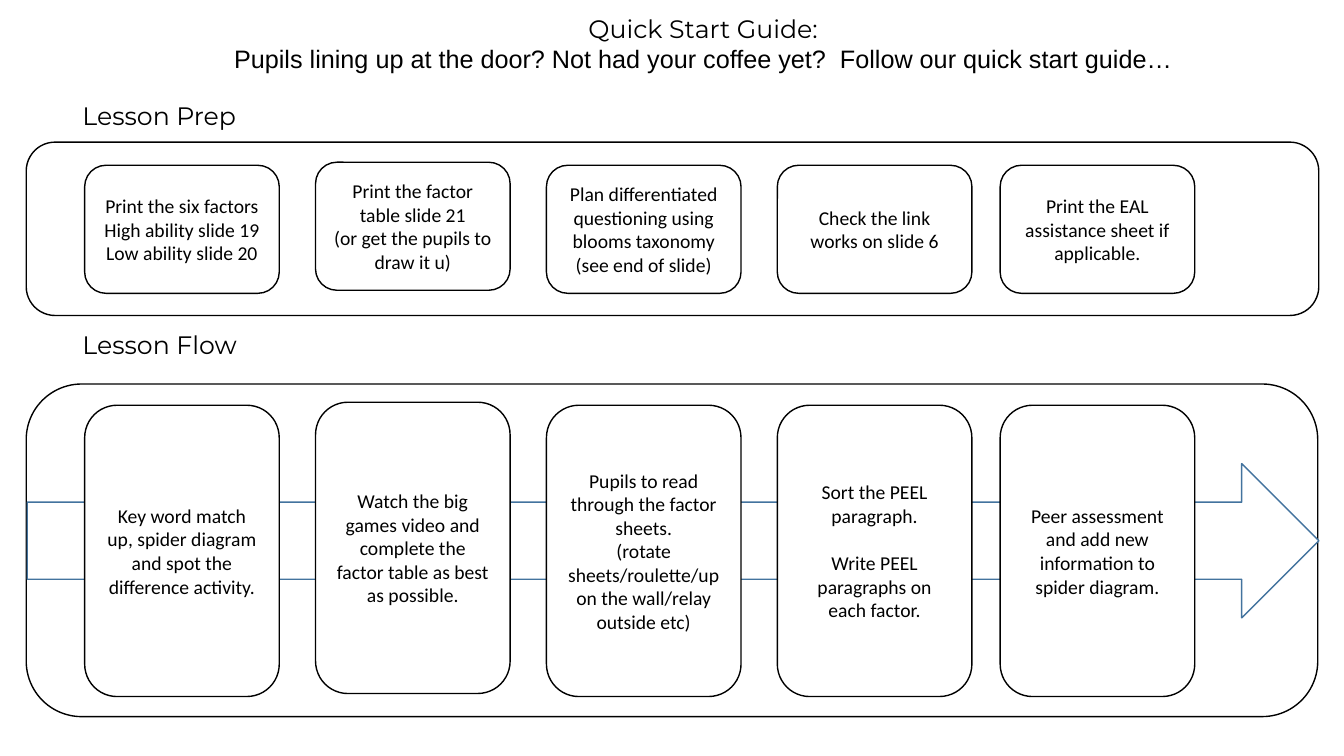
import pptx
import pptx.dml.color
import pptx.enum.shapes
import pptx.enum.text
import pptx.util

SHAPES = pptx.enum.shapes.MSO_SHAPE
ALIGN = pptx.enum.text.PP_ALIGN
BLACK, WHITE, BLUE = "000000", "FFFFFF", "43739E"

deck = pptx.Presentation()
deck.slide_width = pptx.util.Inches(13.33)
deck.slide_height = pptx.util.Inches(7.5)
slide = deck.slides.add_slide(deck.slide_layouts[6])


def add_outline(kind, place, line_colour):
    """Add a white preset shape with a thin outline; place is in inches."""
    shape = slide.shapes.add_shape(kind, *map(pptx.util.Inches, place))
    shape.shadow.inherit = False
    shape.fill.solid()
    shape.fill.fore_color.rgb = pptx.dml.color.RGBColor.from_string(WHITE)
    shape.line.color.rgb = pptx.dml.color.RGBColor.from_string(line_colour)
    shape.line.width = pptx.util.Pt(1)
    return shape


def write(box, lines, size, align, gap=0):
    """Fill a box with (text, font) lines, leaving gap points between them."""
    frame = box.text_frame
    frame.word_wrap = True
    for number, (text, font) in enumerate(lines):
        para = frame.add_paragraph() if number else frame.paragraphs[0]
        para.alignment = align
        if number and gap:
            para.space_before = pptx.util.Pt(gap)
        span = para.add_run()
        span.text = text
        span.font.name = font
        span.font.size = pptx.util.Pt(size)
        span.font.color.rgb = pptx.dml.color.RGBColor.from_string(BLACK)


# Frames behind the steps
add_outline(SHAPES.ROUNDED_RECTANGLE, (0.26, 1.41, 12.82, 1.72), BLACK)
add_outline(SHAPES.ROUNDED_RECTANGLE, (0.26, 3.81, 12.81, 3.3), BLACK)
add_outline(SHAPES.RIGHT_ARROW, (0.27, 4.6, 12.81, 1.53), BLUE)

# Title and section headings
headings = [
    ((0.61, 0.08, 12.73, 0.71), ALIGN.CENTER, [
        ("Quick Start Guide:", "Montserrat"),
        ("Pupils lining up at the door? Not had your coffee yet?  "
         "Follow our quick start guide…", "Arial")]),
    ((0.72, 0.95, 2.24, 0.4), ALIGN.LEFT, [("Lesson Prep", "Montserrat")]),
    ((0.72, 3.22, 2.24, 0.4), ALIGN.LEFT, [("Lesson Flow", "Montserrat")]),
]
for place, align, lines in headings:
    heading = slide.shapes.add_textbox(*map(pptx.util.Inches, place))
    write(heading, lines, 18, align)

# Steps: five columns, with the second a little higher and the last closer in
FIRST_LEFT, PITCH, STEP_WIDTH = 0.84, 2.29, 1.93
LEFT_SHIFT = [0, 0, 0, 0, -0.08]
TOP_SHIFT = [0, -0.03, 0, 0, 0]
ONE_LINE = 17

prep_steps = [
    ["Print the six factors", "High ability slide 19", "Low ability slide 20"],
    ["Print the factor table slide 21", "(or get the pupils to draw it u)"],
    ["Plan differentiated questioning using blooms taxonomy (see end of slide)"],
    ["Check the link works on slide 6"],
    ["Print the EAL assistance sheet if applicable."],
]
flow_steps = [
    ["Key word match up, spider diagram and spot the difference activity."],
    ["Watch the big games video and complete the factor table as best as possible."],
    ["Pupils to read through the factor sheets.",
     "(rotate sheets/roulette/up on the wall/relay outside etc)"],
    ["Sort the PEEL paragraph.", "Write PEEL paragraphs on each factor."],
    ["Peer assessment and add new information to spider diagram."],
]
rows = [
    (1.64, 1.27, prep_steps, [0, 0, 0, 0, 0]),
    (4.02, 2.89, flow_steps, [0, 0, 0, ONE_LINE, 0]),
]
for top, height, steps, gaps in rows:
    for column, (step, gap) in enumerate(zip(steps, gaps)):
        left = FIRST_LEFT + column * PITCH + LEFT_SHIFT[column]
        place = (left, top + TOP_SHIFT[column], STEP_WIDTH, height)
        box = add_outline(SHAPES.ROUNDED_RECTANGLE, place, BLACK)
        box.text_frame.vertical_anchor = pptx.enum.text.MSO_ANCHOR.MIDDLE
        write(box, [(text, "Calibri") for text in step], 14, ALIGN.CENTER, gap)

deck.save("out.pptx")
